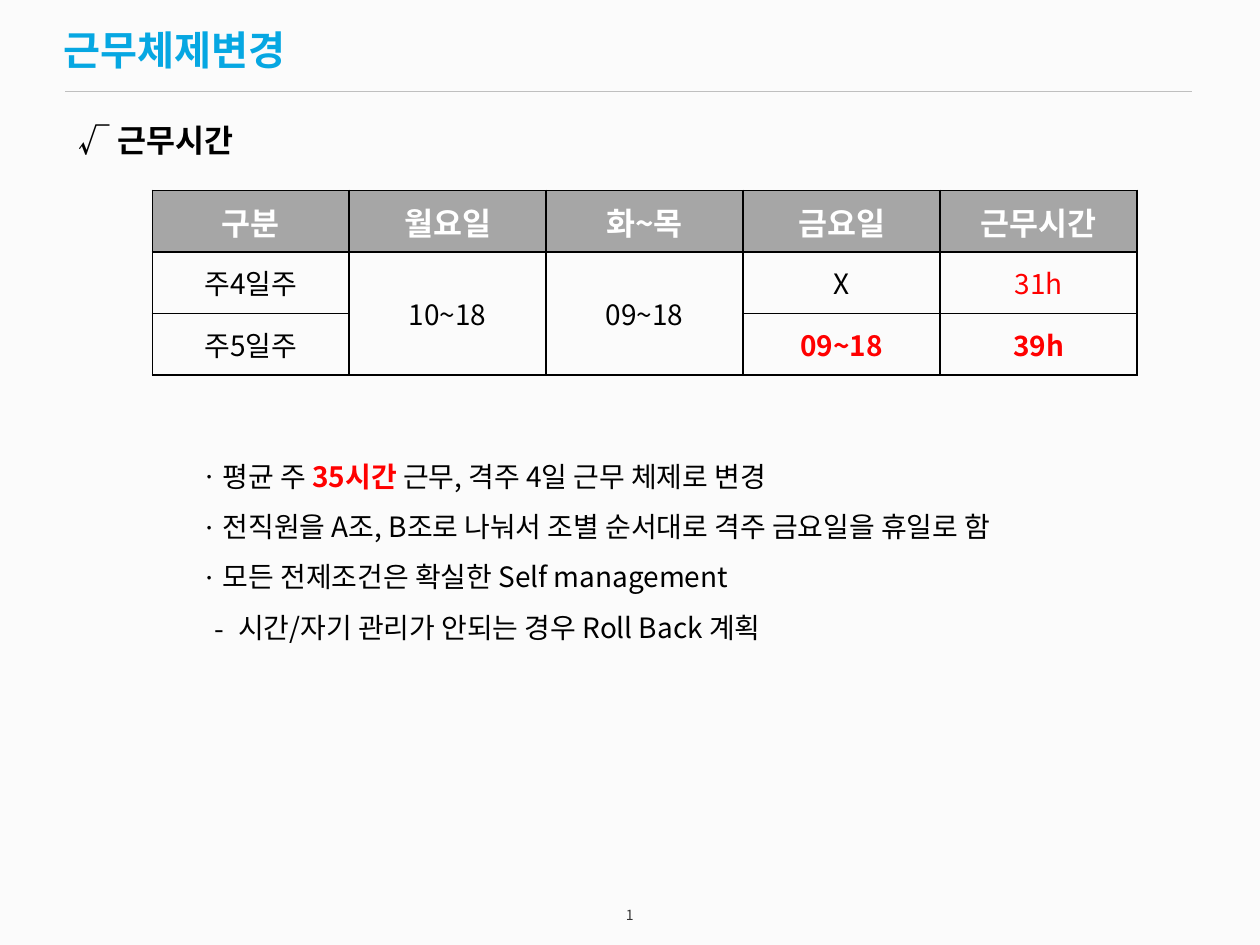
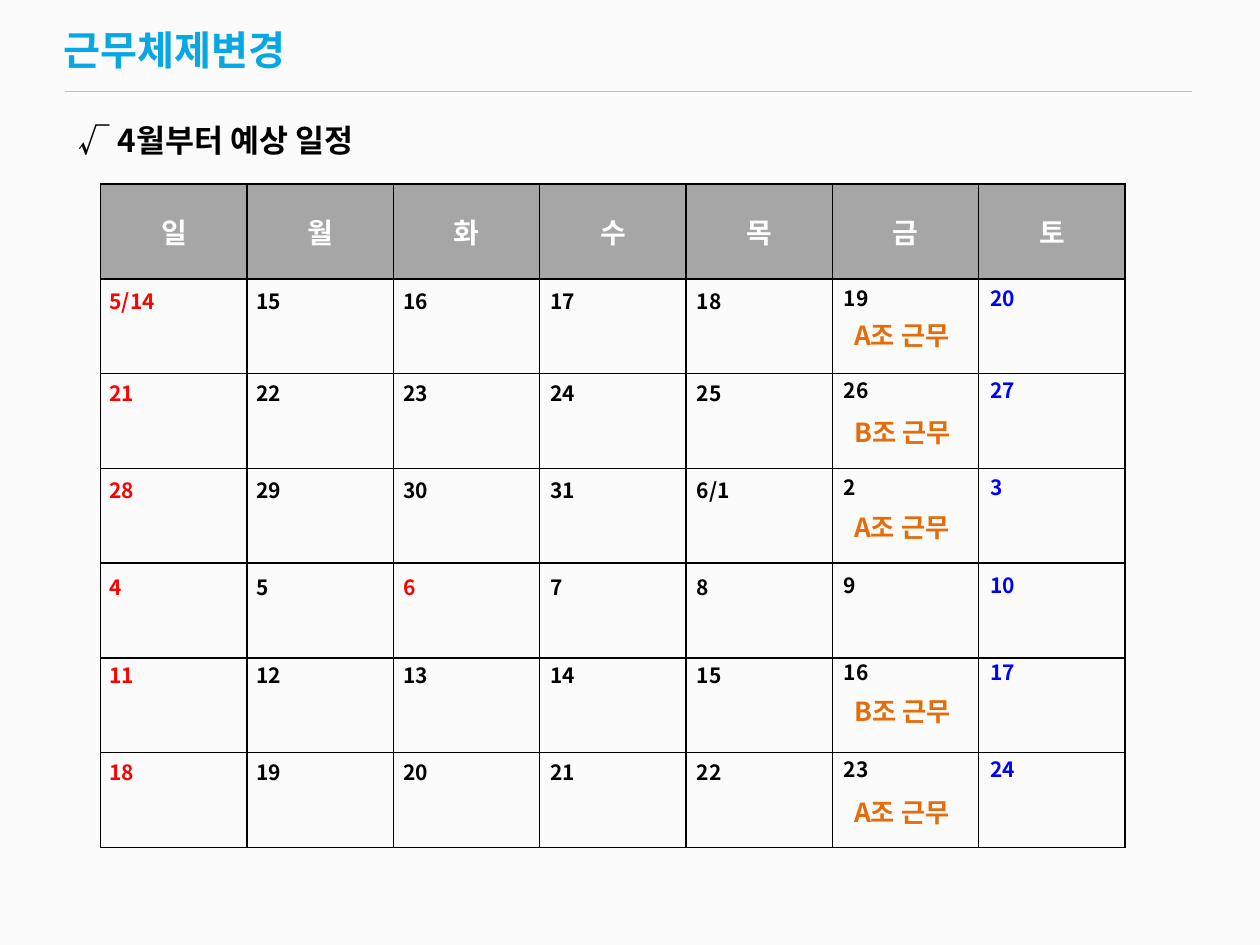
"""Builds two slides on the change of working hours: rules and calendar."""
from lxml import etree
from pptx import Presentation
from pptx.dml.color import RGBColor
from pptx.enum.shapes import MSO_CONNECTOR
from pptx.enum.text import MSO_ANCHOR, MSO_AUTO_SIZE, PP_ALIGN
from pptx.oxml.ns import qn
from pptx.util import Cm, Pt

LEFT, CENTER = PP_ALIGN.LEFT, PP_ALIGN.CENTER
TOP, MIDDLE = MSO_ANCHOR.TOP, MSO_ANCHOR.MIDDLE
FIXED = MSO_AUTO_SIZE.NONE
STRAIGHT = MSO_CONNECTOR.STRAIGHT

TITLE = "근무체제변경"
HOURS_HEAD = "√ 근무시간"
HOURS = [
    [("구분", "head"), ("월요일", "head"), ("화~목", "head"), ("금요일", "head"), ("근무시간", "head")],
    [("주4일주", "body"), ("10~18", "body"), ("09~18", "body"), ("X", "body"), ("31h", "red")],
    [("주5일주", "body"), None, None, ("09~18", "alert"), ("39h", "alert")],
]
RULES = [
    ("ㆍ", [("평균 주 ", "body"), ("35시간 ", "alert"), ("근무, 격주 4일 근무 체제로 변경", "body")]),
    ("ㆍ", [("전직원을 A조, B조로 나눠서 조별 순서대로 격주 금요일을 휴일로 함", "body")]),
    ("ㆍ", [("모든 전제조건은 확실한 Self management", "body")]),
    ("-", [("시간/자기 관리가 안되는 경우 Roll Back 계획", "body")]),
]
PLAN_HEAD = "√ 4월부터 예상 일정"
DAYS = ["일", "월", "화", "수", "목", "금", "토"]
WEEKS = [
    ["5/14", "15", "16", "17", "18", "19", "20"],
    ["21", "22", "23", "24", "25", "26", "27"],
    ["28", "29", "30", "31", "6/1", "2", "3"],
    ["4", "5", "6", "7", "8", "9", "10"],
    ["11", "12", "13", "14", "15", "16", "17"],
    ["18", "19", "20", "21", "22", "23", "24"],
]
TOPS = [5.69, 7.54, 9.5, 11.46, 13.23, 15.18]
SHIFTS = [("A조 근무", 6.32), ("B조 근무", 8.26), ("A조 근무", 10.19),
          ("B조 근무", 13.89), ("A조 근무", 15.93)]
OFF = {(3, 2)}
INDENTS = {"ㆍ": (0.53, -0.53), "-": (0.84, -0.48)}

THEME = {
    "font": "Noto Sans CJK KR",
    "page": "FBFBFB", "rule": "BFBFBF", "band": "A6A6A6", "grid": "000000",
    "text": {
        "title": (23, "06A7E2", True),
        "topic": (18, "000000", True),
        "head": (18, "FFFFFF", True),
        "day": (16, "FFFFFF", True),
        "body": (16, "000000", False),
        "red": (16, "FF0000", False),
        "alert": (16, "FF0000", True),
        "date": (12, "000000", True),
        "sun": (12, "FF0000", True),
        "sat": (12, "0000FF", True),
        "shift": (15, "E46C0A", True),
        "page": (8, "333333", False),
    },
}


def rgb(name):
    return RGBColor.from_string(THEME[name])


def style(font, props, kind):
    size, tone, bold = THEME["text"][kind]
    font.size, font.bold = Pt(size), bold
    font.color.rgb = RGBColor.from_string(tone)
    font.name = THEME["font"]
    etree.SubElement(props, qn("a:ea"), typeface=THEME["font"])


def write(frame, text, kind, align=LEFT):
    frame.text = text
    para = frame.paragraphs[0]
    para.alignment = align
    for run in para.runs:
        style(run.font, run._r.get_or_add_rPr(), kind)


def place(shape, left, top, width, height):
    shape.left, shape.top = Cm(left), Cm(top)
    shape.width, shape.height = Cm(width), Cm(height)


def label(slide, text, kind, left, top, width, height):
    box = slide.shapes.add_textbox(Cm(left), Cm(top), Cm(width), Cm(height))
    box.text_frame.word_wrap = True
    write(box.text_frame, text, kind)
    return box


def start(deck, layout, topic):
    slide = deck.slides.add_slide(deck.slide_layouts[layout])
    title = slide.shapes.title
    place(title, 1.02, 0, 23.04, 1.83)
    frame = title.text_frame
    frame.auto_size, frame.vertical_anchor = FIXED, TOP
    frame.margin_top = Cm(0.51)
    write(frame, TITLE, "title")
    label(slide, topic, "topic", 1.34, 2.31, 12, 1.45)
    return slide


def edge(cell):
    props = cell._tc.get_or_add_tcPr()
    for spot, side in enumerate(("lnL", "lnR", "lnT", "lnB")):
        line = etree.Element(qn("a:" + side), w=str(Pt(1)))
        fill = etree.SubElement(line, qn("a:solidFill"))
        etree.SubElement(fill, qn("a:srgbClr"), val=THEME["grid"])
        props.insert(spot, line)


def grid(slide, rows, left, top, wide, high):
    count, span = len(rows), len(rows[0])
    table = slide.shapes.add_table(count, span, Cm(left), Cm(top),
                                   Cm(wide * span), Cm(high * count)).table
    for col in table.columns:
        col.width = Cm(wide)
    for y, row in enumerate(rows):
        table.rows[y].height = Cm(high)
        for x, item in enumerate(row):
            cell = table.cell(y, x)
            cell.vertical_anchor = MIDDLE
            if y:
                cell.fill.background()
            else:
                cell.fill.solid()
                cell.fill.fore_color.rgb = rgb("band")
            edge(cell)
            if item:
                write(cell.text_frame, *item, CENTER)
    return table


def number(slide):
    box = label(slide, "", "page", 12.01, 17.93, 1.37, 1.02)
    box.text_frame.vertical_anchor = MIDDLE
    para = box.text_frame.paragraphs[0]
    para.alignment = CENTER
    run = para.add_run()
    run.text = "1"
    style(run.font, run._r.get_or_add_rPr(), "page")
    field = etree.SubElement(para._p, qn("a:fld"), type="slidenum",
                             id="{B6F15528-21DE-4FAA-801E-634DDDAF4B2B}")
    field.extend(list(run._r))
    para._p.remove(run._r)


def bullets(shape):
    place(shape, 3.71, 8.79, 19.2, 7.24)
    frame = shape.text_frame
    frame.auto_size, frame.vertical_anchor = FIXED, TOP
    for spot, (mark, parts) in enumerate(RULES):
        para = frame.add_paragraph() if spot else frame.paragraphs[0]
        para.line_spacing = 1.5
        para.space_before = Pt(0)
        margin, indent = INDENTS[mark]
        props = para._p.get_or_add_pPr()
        props.set("marL", str(Cm(margin)))
        props.set("indent", str(Cm(indent)))
        etree.SubElement(props, qn("a:buFont"), typeface=THEME["font"])
        etree.SubElement(props, qn("a:buChar"), char=mark)
        for text, kind in parts:
            run = para.add_run()
            run.text = text
            style(run.font, run._r.get_or_add_rPr(), kind)


def dress(deck, slide):
    master = deck.slide_master
    master.background.fill.solid()
    master.background.fill.fore_color.rgb = rgb("page")
    line = slide.shapes.add_connector(STRAIGHT, Cm(1.32), Cm(1.83), Cm(24.03), Cm(1.83))
    line.line.color.rgb = rgb("rule")
    line.line.width = Pt(0.25)
    etree.SubElement(line.element.spPr, qn("a:effectLst"))
    line.element.nvCxnSpPr.cNvPr.set("id", "20")
    master.shapes.element.append(line.element)


def hours(deck):
    slide = start(deck, 1, HOURS_HEAD)
    dress(deck, slide)
    table = grid(slide, HOURS, 3.07, 3.84, 3.97, 1.24)
    for x in (1, 2):
        table.cell(1, x).merge(table.cell(2, x))
    bullets(slide.placeholders[1])
    number(slide)


def plan(deck):
    slide = start(deck, 5, PLAN_HEAD)
    rows = [[(day, "day") for day in DAYS]] + [[None] * len(DAYS) for _ in WEEKS]
    grid(slide, rows, 2.03, 3.71, 2.95, 1.91)
    for y, (week, top) in enumerate(zip(WEEKS, TOPS)):
        for x, day in enumerate(week):
            kind = "sun" if x == 0 or (y, x) in OFF else "sat" if x == 6 else "date"
            lift = 0.05 if x > 4 else 0
            label(slide, day, kind, 1.96 + 2.96 * x, top - lift, 2.54, 1.2)
    for text, top in SHIFTS:
        label(slide, text, "shift", 16.97, top, 3, 1.37)


def main():
    deck = Presentation()
    deck.slide_width, deck.slide_height = Cm(25.4), Cm(19.05)
    hours(deck)
    plan(deck)
    deck.save("out.pptx")


if __name__ == "__main__":
    main()
